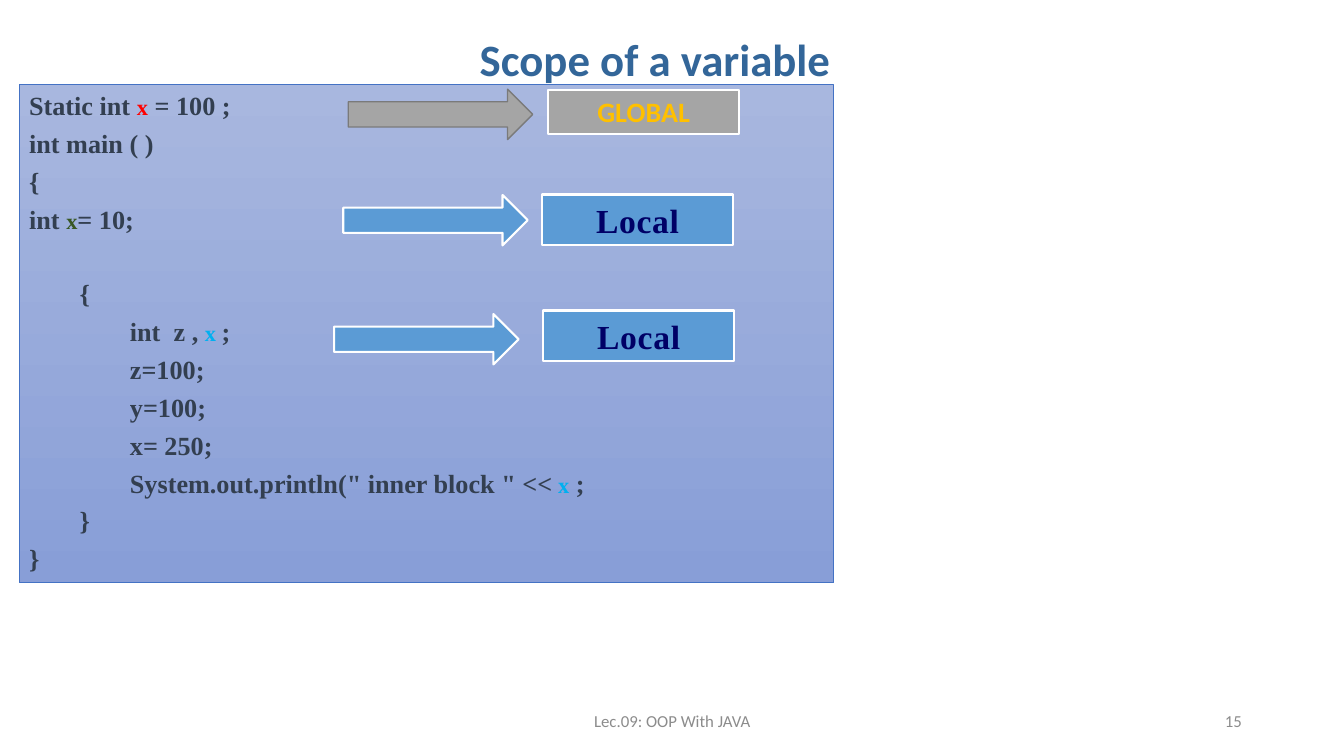
"""Build the slide on the scope of a variable."""
from pptx import Presentation, util as u
from pptx.dml.color import RGBColor
from pptx.enum import shapes, text

THEME = {
    "sans": "Calibri", "serif": "Times New Roman",
    "ink": "333F50", "global": "FF0000", "outer": "385723", "inner": "00B0F0",
    "title": "336699", "footer": "8C8C8C", "gold": "FFC000", "navy": "000066",
    "grey": "A5A5A5", "grey_edge": "7A7A7A", "blue": "5B9BD5", "white": "FFFFFF",
    "panel_top": "A8B7DF", "panel_bottom": "889ED7", "panel_edge": "4472C4",
    "title_size": 32, "local_size": 24, "global_size": 20,
    "code_size": 18.7, "variable_size": 16, "footer_size": 12,
}

CODE = [
    (0, [("Static int ", "ink"), ("x", "global"), (" = 100 ;", "ink")]),
    (0, [("int main ( )", "ink")]),
    (0, [("{", "ink")]),
    (0, [("int ", "ink"), ("x", "outer"), ("= 10;", "ink")]),
    (1, [("{", "ink")]),
    (2, [("int  z , ", "ink"), ("x ", "inner"), (";", "ink")]),
    (2, [("z=100;", "ink")]),
    (2, [("y=100;", "ink")]),
    (2, [("x= 250;", "ink")]),
    (2, [('System.out.println(" inner block " <<', "ink"), (" ", "global"),
         ("x", "inner"), (" ;", "ink")]),
    (1, [("}", "ink")]),
    (0, [("}", "ink")]),
]
BLOCK_START = 4
LINE_GAP, BLOCK_GAP = 4.6, 30.7
INDENT, HANG = 0.5, 0.31

PANEL = (1.43, 11.2, 60.6, 65.87)
ARROW_SIZE = (3.75, 24.4)
LABEL_WIDTH = 14.18
SCOPES = [
    {"text": "GLOBAL", "arrow": (30.9, 2.93), "label": (40.8, 11.87), "height": 5.87,
     "fill": "grey", "edge": ("grey_edge", 1),
     "style": ("sans", "global_size", "gold", True), "tracking": 0},
    *({"text": "Local", "arrow": arrow, "label": label, "height": 6.67,
       "fill": "blue", "edge": ("white", 1.5),
       "style": ("serif", "local_size", "navy", True), "tracking": 50}
      for arrow, label in [((30.53, 16.93), (40.35, 25.73)),
                           ((29.85, 32.67), (40.43, 41.07))]),
]
CAPTIONS = [
    ("Scope of a variable", (15, 2.27, 67.5, 11.07), "CENTER",
     ("sans", "title_size", "title", True)),
    ("Lec.09: OOP With JAVA", (33.15, 92.67, 33.75, 5.33), "CENTER",
     ("sans", "footer_size", "footer", False)),
    ("15", (70.65, 92.67, 22.5, 5.33), "RIGHT",
     ("sans", "footer_size", "footer", False)),
]

deck = Presentation()
deck.slide_width, deck.slide_height = u.Inches(13.33), u.Inches(7.5)
page = deck.slides.add_slide(deck.slide_layouts[6])


def color(name):
    return RGBColor.from_string(THEME[name])


def place(percents):
    sides = (deck.slide_width, deck.slide_height) * 2
    return [round(side * share / 100) for side, share in zip(sides, percents)]


def add_span(para, words, style):
    face, size, ink, bold = style
    span = para.add_run()
    span.text = words
    formats = {"name": THEME[face], "size": u.Pt(THEME[size]), "bold": bold}
    for name, value in formats.items():
        setattr(span.font, name, value)
    span.font.color.rgb = color(ink)
    return span


def add_shape(kind, percents, fill, edge):
    shape = page.shapes.add_shape(kind, *place(percents))
    shape.shadow.inherit = False
    if fill:
        shape.fill.solid()
        shape.fill.fore_color.rgb = color(fill)
    shape.line.color.rgb = color(edge[0])
    shape.line.width = u.Pt(edge[1])
    shape.text_frame.vertical_anchor = text.MSO_ANCHOR.TOP
    return shape


def add_code():
    panel = add_shape(shapes.MSO_SHAPE.RECTANGLE, PANEL, None, ("panel_edge", 0.5))
    panel.fill.gradient()
    panel.fill.gradient_angle = 270
    for stop, name in zip(panel.fill.gradient_stops, ("panel_top", "panel_bottom")):
        stop.color.rgb = color(name)
    frame = panel.text_frame
    for row, (level, spans) in enumerate(CODE):
        para = frame.add_paragraph() if row else frame.paragraphs[0]
        para.alignment = text.PP_ALIGN.LEFT
        para.level = level
        margins = para._p.get_or_add_pPr()
        margins.set("marL", str(u.Inches(HANG + level * INDENT)))
        margins.set("indent", str(u.Inches(-HANG)))
        if row:
            para.space_before = u.Pt(BLOCK_GAP if row == BLOCK_START else LINE_GAP)
        for words, ink in spans:
            size = "code_size" if ink == "ink" else "variable_size"
            add_span(para, words, ("serif", size, ink, True))


def add_scope(scope):
    arrow = add_shape(shapes.MSO_SHAPE.DOWN_ARROW, scope["arrow"] + ARROW_SIZE,
                      scope["fill"], scope["edge"])
    arrow.rotation = 270
    label = add_shape(shapes.MSO_SHAPE.RECTANGLE,
                      scope["label"] + (LABEL_WIDTH, scope["height"]),
                      scope["fill"], ("white", 1.5))
    para = label.text_frame.paragraphs[0]
    para.alignment = text.PP_ALIGN.CENTER
    span = add_span(para, scope["text"], scope["style"])
    if scope["tracking"]:
        span.font._element.set("spc", str(scope["tracking"]))


def add_caption(words, percents, alignment, style):
    frame = page.shapes.add_textbox(*place(percents)).text_frame
    frame.word_wrap = True
    frame.vertical_anchor = text.MSO_ANCHOR.MIDDLE
    para = frame.paragraphs[0]
    para.alignment = text.PP_ALIGN[alignment]
    add_span(para, words, style)


add_code()
for scope in SCOPES:
    add_scope(scope)
for caption in CAPTIONS:
    add_caption(*caption)
deck.save("out.pptx")
